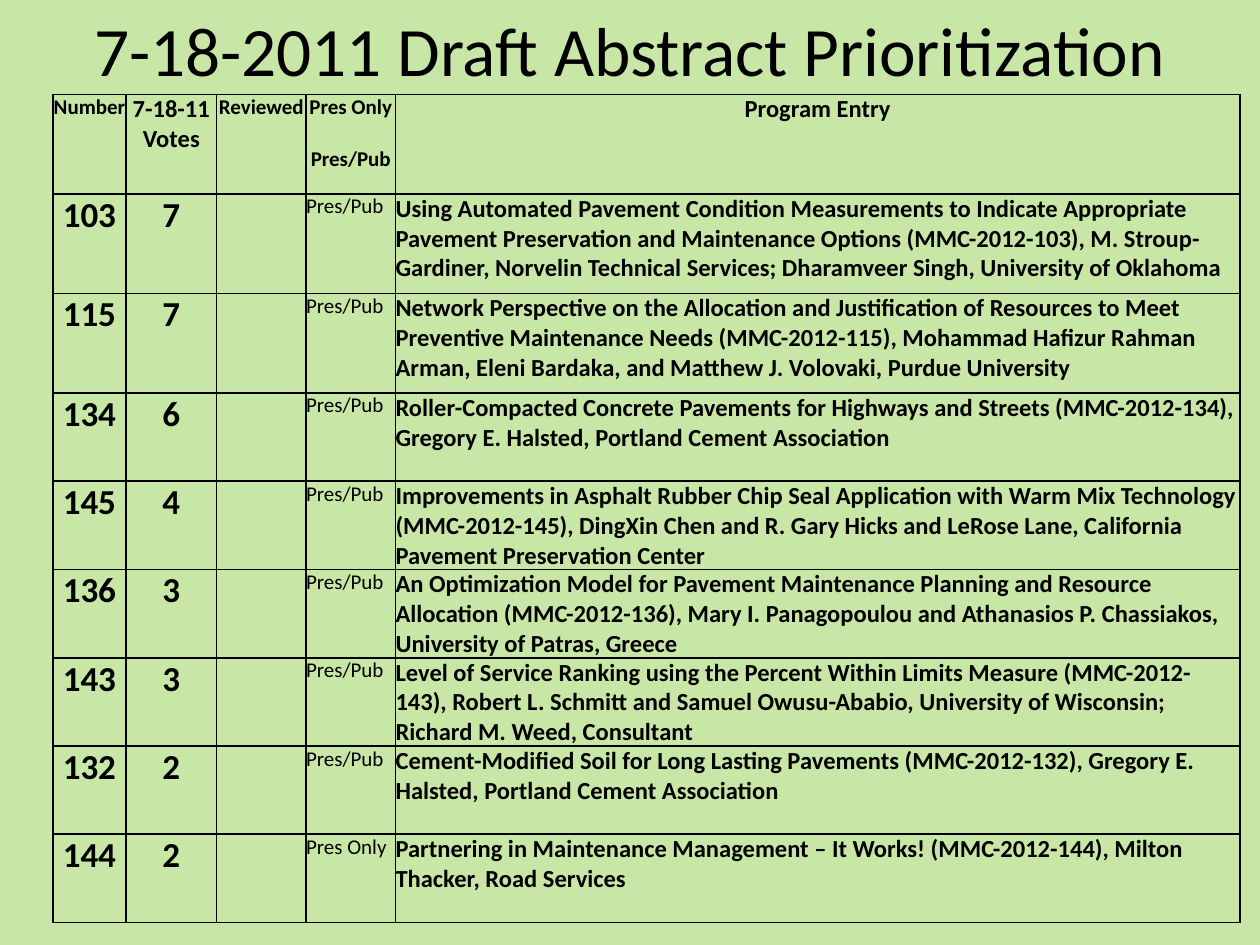
"""Build the abstract prioritization slide with its ranked program table."""
from dataclasses import dataclass

from lxml.etree import SubElement
from pptx import Presentation
from pptx.dml.color import RGBColor
from pptx.enum.text import MSO_ANCHOR, PP_ALIGN
from pptx.oxml.ns import qn
from pptx.slide import Slide
from pptx.table import _Cell
from pptx.text.text import TextFrame
from pptx.util import Inches, Pt

HUES = {"ground": "C8E7A7", "ink": "000000"}
FONT = "Calibri"
WIDE, HIGH = Inches(10), Inches(7.5)
COLS = [0.058, 0.072, 0.071, 0.071, 0.67]
ROWS = [0.79 / 7.5] * 3 + [0.7 / 7.5] * 6
SIDES = ("a:lnL", "a:lnR", "a:lnT", "a:lnB")


@dataclass
class Style:
    size: float
    bold: bool = True
    align: PP_ALIGN = PP_ALIGN.CENTER
    gap: float = 0


@dataclass
class Entry:
    number: int
    votes: int
    text: str
    kind: str = "Pres/Pub"


HEADS = [
    ("Number", Style(12)),
    ("7-18-11\nVotes", Style(14)),
    ("Reviewed", Style(12)),
    ("Pres Only\nPres/Pub", Style(12, gap=15)),
    ("Program Entry", Style(14)),
]
BODY = [Style(20), Style(20), Style(12), Style(12, False, PP_ALIGN.LEFT),
        Style(14, True, PP_ALIGN.LEFT)]
ENTRIES = [
    Entry(103, 7, "Using Automated Pavement Condition Measurements to Indicate Appropriate "
          "Pavement Preservation and Maintenance Options (MMC-2012-103), M. Stroup-Gardiner, "
          "Norvelin Technical Services; Dharamveer Singh, University of Oklahoma"),
    Entry(115, 7, "Network Perspective on the Allocation and Justification of Resources to Meet "
          "Preventive Maintenance Needs (MMC-2012-115), Mohammad Hafizur Rahman Arman, "
          "Eleni Bardaka, and Matthew J. Volovaki, Purdue University"),
    Entry(134, 6, "Roller-Compacted Concrete Pavements for Highways and Streets (MMC-2012-134), "
          "Gregory E. Halsted, Portland Cement Association"),
    Entry(145, 4, "Improvements in Asphalt Rubber Chip Seal Application with Warm Mix Technology "
          "(MMC-2012-145), DingXin Chen and R. Gary Hicks and LeRose Lane, California "
          "Pavement Preservation Center"),
    Entry(136, 3, "An Optimization Model for Pavement Maintenance Planning and Resource "
          "Allocation (MMC-2012-136), Mary I. Panagopoulou and Athanasios P. Chassiakos, "
          "University of Patras, Greece"),
    Entry(143, 3, "Level of Service Ranking using the Percent Within Limits Measure "
          "(MMC-2012-143), Robert L. Schmitt and Samuel Owusu-Ababio, University of Wisconsin; "
          "Richard M. Weed, Consultant"),
    Entry(132, 2, "Cement-Modified Soil for Long Lasting Pavements (MMC-2012-132), "
          "Gregory E. Halsted, Portland Cement Association"),
    Entry(144, 2, "Partnering in Maintenance Management – It Works! (MMC-2012-144), "
          "Milton Thacker, Road Services", "Pres Only"),
]


def write(frame: TextFrame, text: str, style: Style) -> None:
    frame.text = text
    frame.margin_left = frame.margin_right = frame.margin_top = frame.margin_bottom = 0
    for index, para in enumerate(frame.paragraphs):
        para.alignment = style.align
        para.space_before = Pt(style.gap if index else 0)
        for run in para.runs:
            run.font.name = FONT
            run.font.size = Pt(style.size)
            run.font.bold = style.bold
            run.font.color.rgb = RGBColor.from_string(HUES["ink"])


def border(cell: _Cell) -> None:
    props = cell._tc.get_or_add_tcPr()
    for side in SIDES:
        line = SubElement(props, qn(side), w=str(Pt(1)))
        fill = SubElement(line, qn("a:solidFill"))
        SubElement(fill, qn("a:srgbClr"), val=HUES["ink"])


def fill_cell(cell: _Cell, text: str, style: Style) -> None:
    write(cell.text_frame, text, style)
    cell.margin_left = cell.margin_right = cell.margin_top = cell.margin_bottom = 0
    border(cell)
    cell.fill.background()


def add_title(slide: Slide) -> None:
    box = slide.shapes.add_textbox(
        int(WIDE * 0.05), Inches(0.08), int(WIDE * 0.9), Inches(0.62))
    write(box.text_frame, "7-18-2011 Draft Abstract Prioritization", Style(39.6, False))
    box.text_frame.word_wrap = True
    box.text_frame.vertical_anchor = MSO_ANCHOR.MIDDLE


def add_grid(slide: Slide) -> None:
    table = slide.shapes.add_table(
        len(ROWS), len(COLS), int(WIDE * 0.042), int(HIGH * 0.1),
        int(WIDE * sum(COLS)), int(HIGH * sum(ROWS))).table
    table.first_row = table.horz_banding = False
    for col, share in zip(table.columns, COLS):
        col.width = int(WIDE * share)
    for row, share in zip(table.rows, ROWS):
        row.height = int(HIGH * share)
    lines = [HEADS]
    for item in ENTRIES:
        texts = (str(item.number), str(item.votes), "", item.kind, item.text)
        lines.append(list(zip(texts, BODY)))
    for row, line in zip(table.rows, lines):
        for cell, (text, style) in zip(row.cells, line):
            fill_cell(cell, text, style)


def main() -> None:
    deck = Presentation()
    deck.slide_width, deck.slide_height = WIDE, HIGH
    slide = deck.slides.add_slide(deck.slide_layouts[6])
    ground = slide.background.fill
    ground.solid()
    ground.fore_color.rgb = RGBColor.from_string(HUES["ground"])
    add_title(slide)
    add_grid(slide)
    deck.save("out.pptx")


if __name__ == "__main__":
    main()
